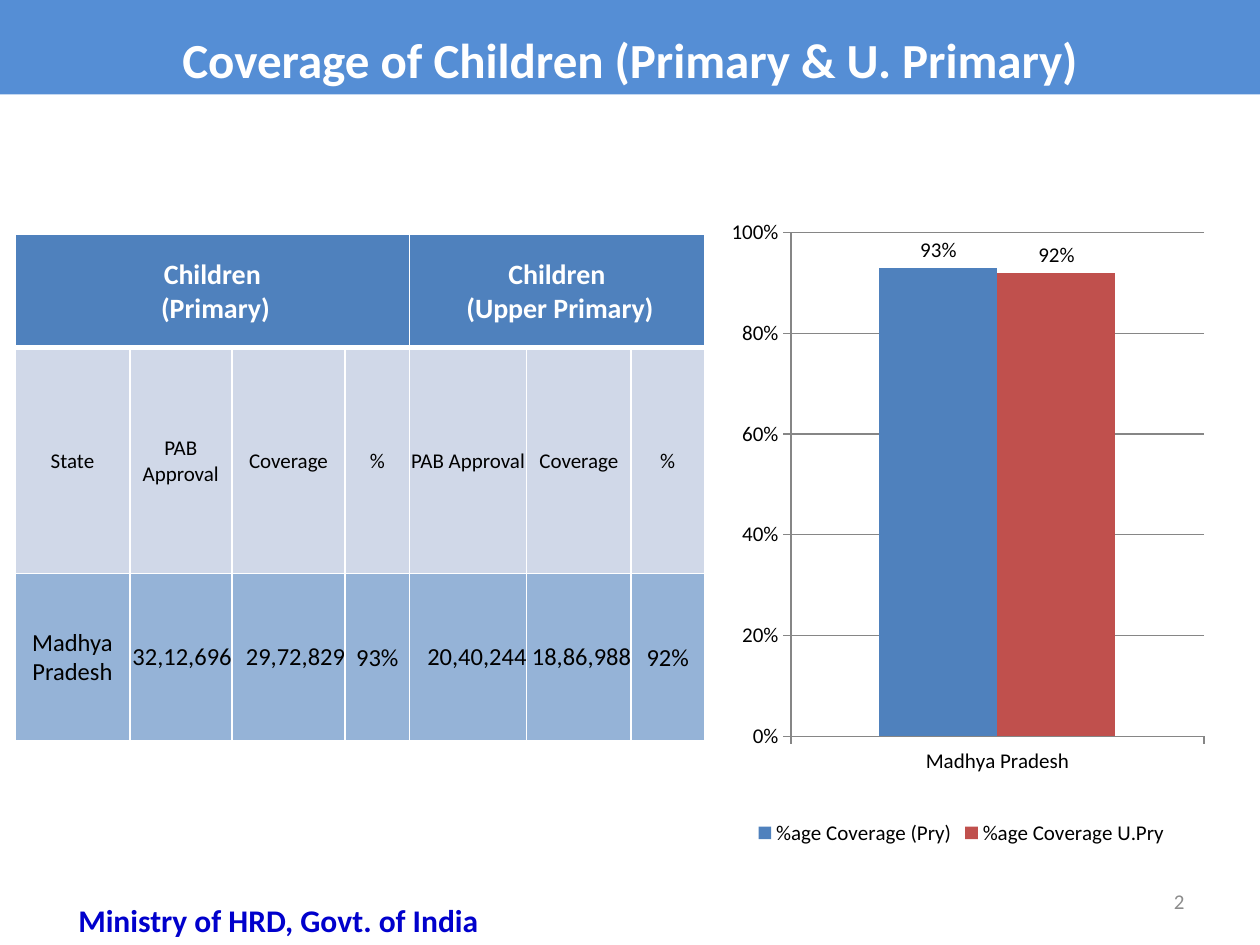
from dataclasses import dataclass
from typing import Any

from lxml import etree
from pptx import Presentation
from pptx import util as u
from pptx.chart.data import CategoryChartData
from pptx.dml.color import RGBColor
from pptx.enum import chart as charts, text
from pptx.oxml import parse_xml
from pptx.oxml.ns import nsdecls, qn

EMU_PER_PX = 9144  # 100 px to the inch


@dataclass(frozen=True)
class Theme:
    font: str = "Calibri"
    banner: str = "558ED5"
    primary: str = "4F81BD"
    upper: str = "C0504D"
    subheading: str = "D0D8E8"
    state_row: str = "95B3D7"
    white: str = "FFFFFF"
    black: str = "000000"
    grid: str = "868686"
    number: str = "8C8C8C"
    ministry: str = "0000CC"
    title_size: int = 28
    footer_size: int = 18
    heading_size: int = 16
    value_size: int = 14
    small_size: int = 12


@dataclass(frozen=True)
class Box:
    left: int
    top: int
    width: int
    height: int

    def emu(self) -> tuple[u.Emu, ...]:
        return tuple(px(n) for n in (self.left, self.top, self.width, self.height))


@dataclass(frozen=True)
class TextStyle:
    size: int
    color: str
    bold: bool = False
    align: Any = text.PP_ALIGN.CENTER


@dataclass(frozen=True)
class TableRow:
    height: int
    fill: str
    style: TextStyle
    cells: dict[int, str]
    bottom_border: int = 1


THEME = Theme()
COLUMN_WIDTHS = (91, 81, 90, 51, 93, 83, 58)
HEADING_SPANS = ((0, 3), (4, 6))
COUNT_COLUMNS = (1, 2, 4, 5)
MEASURES = ("PAB Approval", "Coverage", "%")

TABLE_ROWS = (
    TableRow(90, THEME.primary, TextStyle(THEME.heading_size, THEME.white, True),
             {0: "Children\n (Primary)", 4: "Children\n (Upper Primary)"}, 3),
    TableRow(179, THEME.subheading, TextStyle(THEME.small_size, THEME.black),
             dict(enumerate(("State", *MEASURES, *MEASURES)))),
    TableRow(133, THEME.state_row, TextStyle(THEME.value_size, THEME.black),
             dict(enumerate(("Madhya Pradesh", "32,12,696", "29,72,829", "93%",
                             "20,40,244", "18,86,988", "92%")))),
)
COVERAGE = (("%age Coverage (Pry)", 0.93, THEME.primary),
            ("%age Coverage U.Pry", 0.92, THEME.upper))


def px(length: int) -> u.Emu:
    return u.Emu(length * EMU_PER_PX)


def apply(target: Any, values: dict[str, Any]) -> None:
    for name, value in values.items():
        setattr(target, name, value)


def paint(fill: Any, color: str) -> None:
    fill.solid()
    fill.fore_color.rgb = RGBColor.from_string(color)


def write(frame: Any, wording: str, style: TextStyle) -> None:
    frame.text = wording
    for paragraph in frame.paragraphs:
        paragraph.alignment = style.align
        for run in paragraph.runs:
            apply(run.font, {"name": THEME.font, "size": u.Pt(style.size), "bold": style.bold})
            run.font.color.rgb = RGBColor.from_string(style.color)


def add_title(slide: Any) -> None:
    title = slide.shapes.title
    apply(title, dict(zip(("left", "top", "width", "height"), Box(0, 0, 1000, 75).emu())))
    paint(title.fill, THEME.banner)
    write(title.text_frame, "Coverage of Children (Primary & U. Primary)",
          TextStyle(THEME.title_size, THEME.white, True))
    title.text_frame.vertical_anchor = text.MSO_ANCHOR.MIDDLE
    title.text_frame.paragraphs[0].line_spacing = 1.4


def add_label(slide: Any, box: Box, wording: str, style: TextStyle, anchor: Any) -> None:
    frame = slide.shapes.add_textbox(*box.emu()).text_frame
    apply(frame, {"word_wrap": True, "vertical_anchor": anchor})
    write(frame, wording, style)


def add_borders(cell: Any, bottom: int) -> None:
    properties = cell._tc.get_or_add_tcPr()
    for side, points in (("L", 1), ("R", 1), ("T", 1), ("B", bottom)):
        line = etree.SubElement(properties, qn(f"a:ln{side}"), w=str(u.Pt(points)))
        solid = etree.SubElement(line, qn("a:solidFill"))
        etree.SubElement(solid, qn("a:srgbClr"), val=THEME.white)


def add_coverage_table(slide: Any) -> None:
    box = Box(12, 186, sum(COLUMN_WIDTHS), sum(row.height for row in TABLE_ROWS))
    table = slide.shapes.add_table(len(TABLE_ROWS), len(COLUMN_WIDTHS), *box.emu()).table
    for column, width in zip(table.columns, COLUMN_WIDTHS):
        column.width = px(width)
    for first, last in HEADING_SPANS:
        table.cell(0, first).merge(table.cell(0, last))

    for row_index, row in enumerate(TABLE_ROWS):
        table.rows[row_index].height = px(row.height)
        for column_index in range(len(COLUMN_WIDTHS)):
            cell = table.cell(row_index, column_index)
            is_count = row is TABLE_ROWS[-1] and column_index in COUNT_COLUMNS
            inset = px(0 if is_count else 1)
            apply(cell, {"margin_left": inset, "margin_right": inset, "margin_top": inset,
                         "margin_bottom": 0, "vertical_anchor": text.MSO_ANCHOR.MIDDLE})
            add_borders(cell, row.bottom_border)
            paint(cell.fill, row.fill)
            if column_index in row.cells:
                write(cell.text_frame, row.cells[column_index], row.style)
            if is_count:
                cell.text_frame.paragraphs[0].alignment = text.PP_ALIGN.RIGHT


def place_plot(chart: Any, x: float, y: float, w: float, h: float) -> None:
    """Fix the inner plot area, in fractions of the chart."""
    area = chart._chartSpace.find(".//" + qn("c:plotArea"))
    for old in area.findall(qn("c:layout")):
        area.remove(old)
    sizes = "".join(f'<c:{key} val="{value}"/>' for key, value in
                    (("x", x), ("y", y), ("w", w), ("h", h)))
    area.insert(0, parse_xml(
        f'<c:layout {nsdecls("c")}><c:manualLayout><c:layoutTarget val="inner"/>'
        f'<c:xMode val="edge"/><c:yMode val="edge"/>{sizes}</c:manualLayout></c:layout>'))


def add_coverage_chart(slide: Any) -> None:
    data = CategoryChartData(number_format="0%")
    data.categories = ["Madhya Pradesh"]
    for name, share, _ in COVERAGE:
        data.add_series(name, [share])
    chart = slide.shapes.add_chart(charts.XL_CHART_TYPE.COLUMN_CLUSTERED,
                                   *Box(558, 142, 410, 533).emu(), data).chart
    apply(chart, {"has_title": False, "has_legend": True})
    apply(chart.font, {"name": THEME.font, "size": u.Pt(THEME.small_size)})
    chart.font.color.rgb = RGBColor.from_string(THEME.black)
    apply(chart.legend, {"position": charts.XL_LEGEND_POSITION.BOTTOM,
                         "include_in_layout": False})
    apply(chart.value_axis, {"minimum_scale": 0, "maximum_scale": 1, "major_unit": 0.2,
                             "has_major_gridlines": True})
    apply(chart.value_axis.tick_labels, {"number_format": "0%",
                                         "number_format_is_linked": False})
    for line in (chart.value_axis.format.line, chart.category_axis.format.line,
                 chart.value_axis.major_gridlines.format.line):
        paint(line.fill, THEME.grid)
        line.width = u.Pt(0.75)

    plot = chart.plots[0]
    apply(plot, {"gap_width": 150, "overlap": 0, "vary_by_categories": False})
    for series, (_, _, color) in zip(plot.series, COVERAGE):
        paint(series.format.fill, color)
        apply(series.data_labels, {"show_value": True, "number_format": "0%",
                                   "number_format_is_linked": False,
                                   "position": charts.XL_LABEL_POSITION.OUTSIDE_END})
    place_plot(chart, 0.17, 0.08, 0.8, 0.75)


def main() -> None:
    prs = Presentation()
    apply(prs, {"slide_width": px(1000), "slide_height": px(750)})
    slide = prs.slides.add_slide(prs.slide_layouts.get_by_name("Title Only"))
    add_title(slide)
    add_coverage_chart(slide)
    add_coverage_table(slide)
    add_label(slide, Box(717, 695, 233, 40), "2",
              TextStyle(THEME.small_size, THEME.number, align=text.PP_ALIGN.RIGHT),
              text.MSO_ANCHOR.MIDDLE)
    add_label(slide, Box(25, 710, 392, 40), "Ministry of HRD, Govt. of India",
              TextStyle(THEME.footer_size, THEME.ministry, True), text.MSO_ANCHOR.TOP)
    prs.save("out.pptx")


if __name__ == "__main__":
    main()
